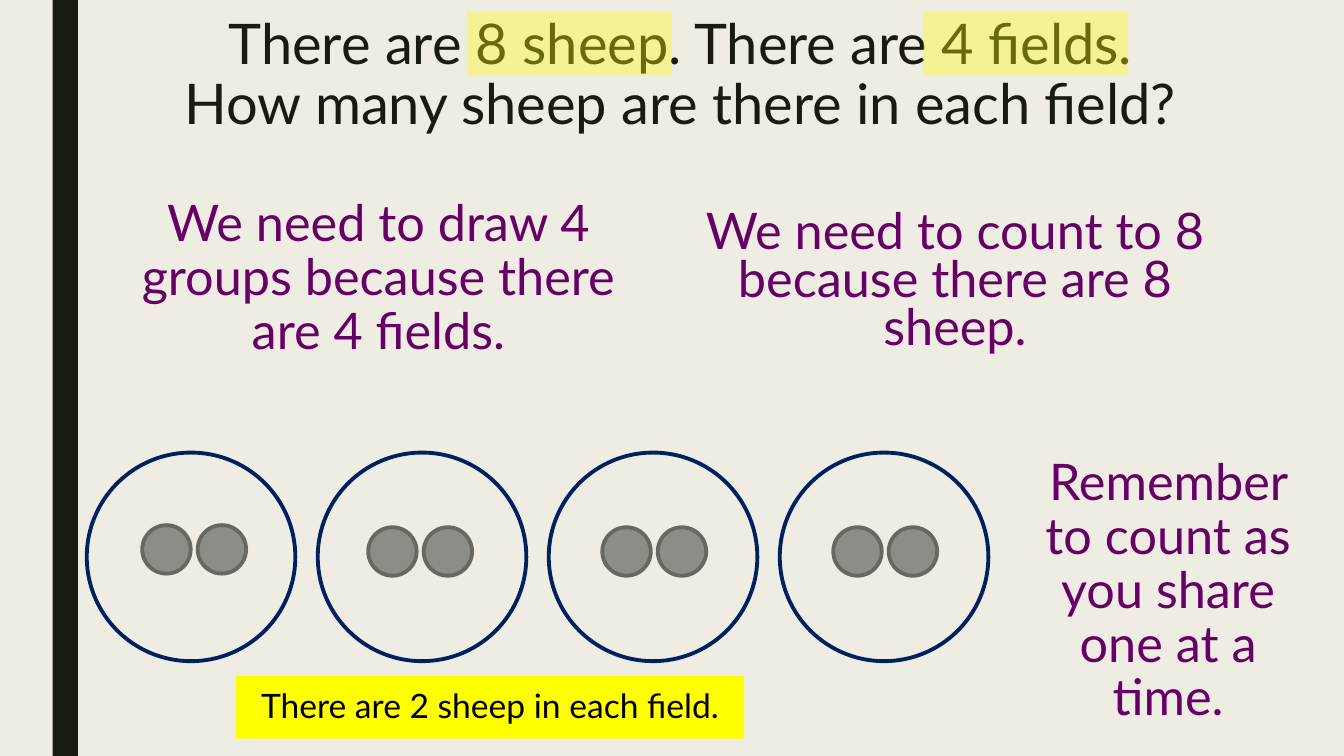
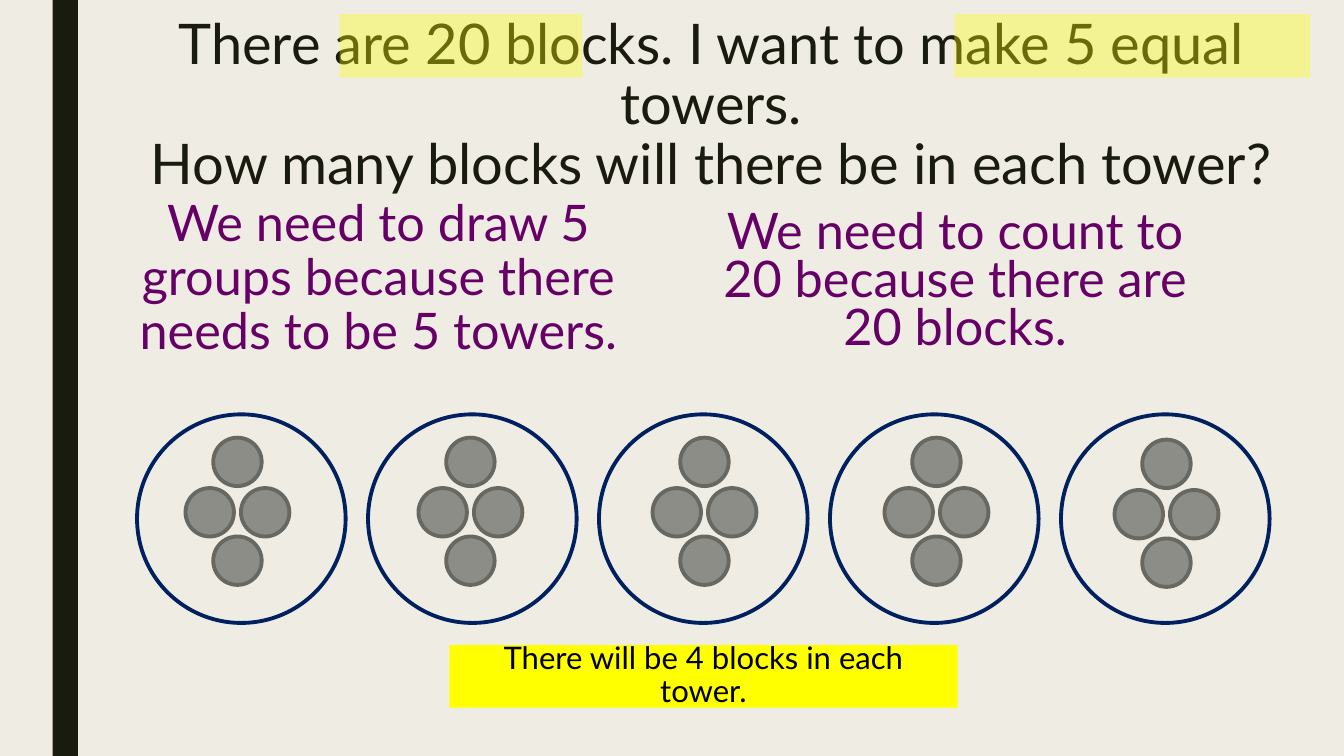
from dataclasses import dataclass
from lxml.etree import SubElement
from pptx import Presentation
from pptx.dml.color import RGBColor
from pptx.enum.shapes import MSO_SHAPE
from pptx.enum.text import MSO_ANCHOR, PP_ALIGN
from pptx.oxml.ns import qn
from pptx.util import Pt


@dataclass(frozen=True)
class Theme:
    """Colours, type sizes and the measures that both slides share."""
    font: str = "Lato"
    paper: str = "EFEDE3"
    ink: str = "191B0E"
    hint: str = "660066"
    black: str = "000000"
    yellow: str = "FFFF00"
    ring: str = "002060"
    counter: str = "8C8D86"
    counter_edge: str = "686863"
    title_size: float = 40
    hint_size: float = 36
    answer_size: float = 24
    small_answer_size: float = 22.2
    spacing: float = 0.89
    tight_spacing: float = 0.79
    outline: float = 2.75
    highlight_opacity: int = 35
    ring_diameter: float = 149
    ring_pitch: float = 165
    counter_diameter: float = 34.6


THEME = Theme()
PAIR = [(0, 0), (39.6, 0)]
DIAMOND = PAIR + [(19.8, -36), (19.8, 34.6)]
DRAW_HINT_AREA = (84.2, 138.2, 372.2, 140.4)
COUNT_HINT_AREA = (488.9, 147.6, 386.6, 118)

PROBLEMS = [
    {
        "question": "There are 8 sheep. There are 4 fields.\n"
                    "How many sheep are there in each field?",
        "question_area": (108, 8.6, 756, 129),
        "highlights": [(333.4, 8.6, 146.2, 45.4), (659.5, 8.6, 146.2, 45.4)],
        "hints": [
            ("We need to draw 4 groups because there are 4 fields.",
             DRAW_HINT_AREA, THEME.spacing),
            ("We need to count to 8 because there are 8 sheep.",
             COUNT_HINT_AREA, THEME.tight_spacing),
            ("Remember to count as you share one at a time.",
             (722.4, 323.3, 224, 199.4), THEME.spacing),
        ],
        "answer": "There are 2 sheep in each field.",
        "answer_area": (168.5, 483, 363, 44.6),
        "answer_size": THEME.answer_size,
        "first_ring": (62, 323.3),
        "share": PAIR,
        "share_offsets": [(39.6, 51.8), (36, 53.3), (38.2, 53.3), (38.2, 53.3)],
    },
    {
        "question": "There are 20 blocks. I want to make 5 equal towers.\n"
                    "How many blocks will there be in each tower?",
        "question_area": (56, 8.6, 904, 162),
        "highlights": [(242.6, 10.1, 173.5, 45.4), (681.8, 10.1, 254.2, 45.4)],
        "hints": [
            ("We need to draw 5 groups because there needs to be 5 towers.",
             DRAW_HINT_AREA, THEME.spacing),
            ("We need to count to 20 because there are 20 blocks.",
             COUNT_HINT_AREA, THEME.tight_spacing),
        ],
        "answer": "There will be 4 blocks in each tower.",
        "answer_area": (321, 460.8, 363, 44.6),
        "answer_size": THEME.small_answer_size,
        "first_ring": (97.9, 296),
        "share": DIAMOND,
        "share_offsets": [(34.6, 52.6), (36, 52.6), (38.2, 52.6),
                          (38.9, 52.6), (38.2, 54)],
    },
]


def apply_format(target, values):
    """Set each named attribute of the target."""
    for attribute, value in values.items():
        setattr(target, attribute, value)


def in_points(area):
    """Turn plain numbers into point lengths."""
    return [Pt(length) for length in area]


def write(frame, wording, size, colour, spacing=THEME.spacing,
          anchor=MSO_ANCHOR.TOP):
    """Put one centred paragraph into a text frame."""
    apply_format(frame, {"word_wrap": True, "vertical_anchor": anchor})
    sentence = frame.paragraphs[0]
    sentence.text = wording
    apply_format(sentence, {"alignment": PP_ALIGN.CENTER,
                            "line_spacing": spacing})
    for run in sentence.runs:
        apply_format(run.font, {"name": THEME.font, "size": Pt(size)})
        run.font.color.rgb = RGBColor.from_string(colour)


def add_words(slide, area, wording, size, colour, spacing=THEME.spacing):
    """Add a centred text box."""
    words = slide.shapes.add_textbox(*in_points(area))
    write(words.text_frame, wording, size, colour, spacing)


def add_figure(slide, preset, area, fill=None, edge=None):
    """Add a preset shape with an optional fill and outline."""
    figure = slide.shapes.add_shape(preset, *in_points(area))
    figure.shadow.inherit = False
    if fill:
        figure.fill.solid()
        figure.fill.fore_color.rgb = RGBColor.from_string(fill)
    else:
        figure.fill.background()
    if edge:
        figure.line.color.rgb = RGBColor.from_string(edge)
        figure.line.width = Pt(THEME.outline)
    else:
        figure.line.fill.background()
    return figure


def add_circle(slide, left, top, diameter, fill, edge):
    """Add an outlined circle."""
    add_figure(slide, MSO_SHAPE.OVAL, (left, top, diameter, diameter),
               fill, edge)


def add_highlight(slide, area):
    """Lay a see-through marker stroke over the question."""
    marker = add_figure(slide, MSO_SHAPE.RECTANGLE, area, THEME.yellow)
    colour = marker.fill._xPr.find(qn("a:solidFill"))[0]
    SubElement(colour, qn("a:alpha"), val=str(THEME.highlight_opacity * 1000))


def add_answer(slide, area, wording, size):
    """Add the yellow answer strip."""
    strip = add_figure(slide, MSO_SHAPE.RECTANGLE, area, THEME.yellow)
    write(strip.text_frame, wording, size, THEME.black,
          anchor=MSO_ANCHOR.MIDDLE)


def add_groups(slide, first_ring, share, share_offsets):
    """Draw a row of rings, each holding an equal share of counters."""
    first_left, top = first_ring
    for index, (share_left, share_top) in enumerate(share_offsets):
        left = first_left + index * THEME.ring_pitch
        add_circle(slide, left, top, THEME.ring_diameter, None, THEME.ring)
        for across, down in share:
            add_circle(slide, left + share_left + across,
                       top + share_top + down, THEME.counter_diameter,
                       THEME.counter, THEME.counter_edge)


def add_problem(deck, problem):
    """Build one sharing problem on a new slide."""
    slide = deck.slides.add_slide(deck.slide_layouts[6])
    add_figure(slide, MSO_SHAPE.RECTANGLE, (37.6, 0, 18, 540), THEME.ink)
    add_words(slide, problem["question_area"], problem["question"],
              THEME.title_size, THEME.ink)
    for wording, area, spacing in problem["hints"]:
        add_words(slide, area, wording, THEME.hint_size, THEME.hint, spacing)
    add_answer(slide, problem["answer_area"], problem["answer"],
               problem["answer_size"])
    add_groups(slide, problem["first_ring"], problem["share"],
               problem["share_offsets"])
    for area in problem["highlights"]:
        add_highlight(slide, area)


def main():
    """Build and save the presentation."""
    deck = Presentation()
    apply_format(deck, {"slide_width": Pt(960), "slide_height": Pt(540)})
    backdrop = deck.slide_master.background.fill
    backdrop.solid()
    backdrop.fore_color.rgb = RGBColor.from_string(THEME.paper)
    for problem in PROBLEMS:
        add_problem(deck, problem)
    deck.save("out.pptx")


if __name__ == "__main__":
    main()
